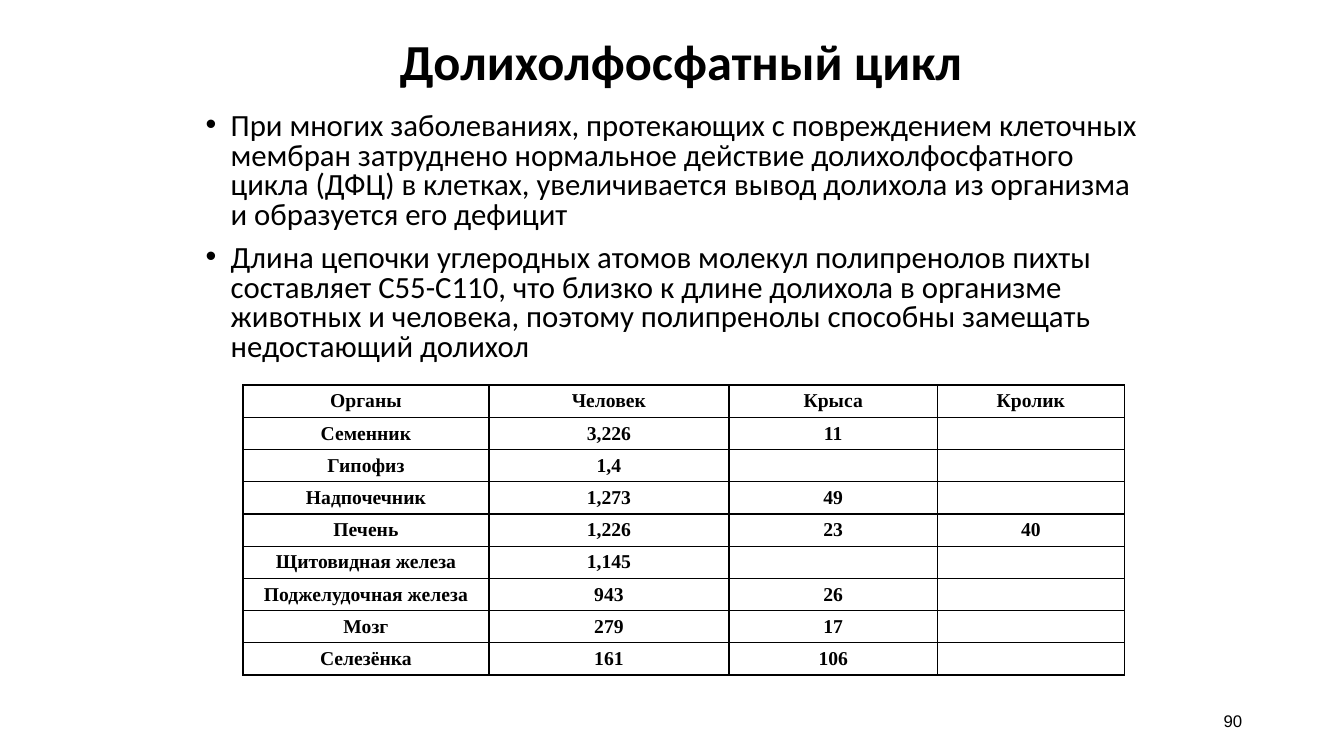
from lxml.etree import SubElement
from pptx import Presentation
from pptx.dml.color import RGBColor
from pptx.enum.text import MSO_ANCHOR, PP_ALIGN
from pptx.oxml.ns import qn
from pptx.util import Pt

SCALE = 9144  # EMU per px, 100 px to the inch
COLORS = {"ink": "000000", "paper": "FFFFFF"}
TITLE = "Долихолфосфатный цикл"
POINTS = [
    "При многих заболеваниях, протекающих с повреждением клеточных мембран "
    "затруднено нормальное действие долихолфосфатного цикла (ДФЦ) в клетках, "
    "увеличивается вывод долихола из организма и образуется его дефицит",
    "Длина цепочки углеродных атомов молекул полипренолов пихты составляет "
    "C55-C110, что близко к длине долихола в организме животных и человека, "
    "поэтому полипренолы способны замещать недостающий долихол",
]
ORGANS = [
    ("Органы", "Человек", "Крыса", "Кролик"),
    ("Семенник", "3,226", "11", ""),
    ("Гипофиз", "1,4", "", ""),
    ("Надпочечник", "1,273", "49", ""),
    ("Печень", "1,226", "23", "40"),
    ("Щитовидная железа", "1,145", "", ""),
    ("Поджелудочная железа", "943", "26", ""),
    ("Мозг", "279", "17", ""),
    ("Селезёнка", "161", "106", ""),
]


def px(*sizes):
    return [size * SCALE for size in sizes]


def color(name):
    return RGBColor.from_string(COLORS[name])


def write(para, text, font="Calibri", size=22, bold=False, align=PP_ALIGN.LEFT,
          lines=1.0, before=0, bullet=""):
    para.alignment, para.line_spacing = align, lines
    para.space_before = Pt(before)
    if bullet:
        props = para._p.get_or_add_pPr()
        indent, = px(25)
        props.set("marL", str(indent))
        props.set("indent", str(-indent))
        SubElement(props, qn("a:buFont"), typeface="Arial")
        SubElement(props, qn("a:buChar"), char=bullet)
    run = para.add_run()
    run.text = text
    run.font.name, run.font.size, run.font.bold = font, Pt(size), bold
    run.font.color.rgb = color("ink")


def border(cell):
    props = cell._tc.get_or_add_tcPr()
    for place, side in enumerate(("lnL", "lnR", "lnT", "lnB")):
        line = SubElement(props, qn(f"a:{side}"), w=str(Pt(1)))
        fill = SubElement(line, qn("a:solidFill"))
        SubElement(fill, qn("a:srgbClr"), val=COLORS["ink"])
        props.insert(place, line)


class Deck:
    def __init__(self, width, height):
        self.show = Presentation()
        self.show.slide_width, self.show.slide_height = px(width, height)
        self.slide = self.show.slides.add_slide(self.show.slide_layouts[6])
        fill = self.slide.background.fill
        fill.solid()
        fill.fore_color.rgb = color("paper")

    def text(self, box, texts, anchor=MSO_ANCHOR.TOP, before=0, **style):
        frame = self.slide.shapes.add_textbox(*px(*box)).text_frame
        frame.word_wrap, frame.vertical_anchor = True, anchor
        for num, text in enumerate(texts):
            para = frame.add_paragraph() if num else frame.paragraphs[0]
            write(para, text, before=before if num else 0, **style)

    def table(self, left, top, widths, height, rows, **style):
        size = px(left, top, sum(widths), height * len(rows))
        table = self.slide.shapes.add_table(len(rows), len(widths), *size).table
        for col, width in zip(table.columns, px(*widths)):
            col.width = width
        for line, row in zip(table.rows, rows):
            line.height, = px(height)
            for cell, text in zip(line.cells, row):
                cell.margin_top = cell.margin_bottom = 0
                cell.vertical_anchor = MSO_ANCHOR.MIDDLE
                cell.fill.background()
                border(cell)
                if text:
                    write(cell.text_frame.paragraphs[0], text, **style)


def main():
    deck = Deck(1333, 750)
    deck.text((217, 27, 917, 73), [TITLE], MSO_ANCHOR.MIDDLE, size=36, bold=True,
              align=PP_ALIGN.CENTER, lines=0.9)
    deck.text((194, 107, 953, 291), POINTS, before=10, lines=0.8, bullet="•")
    deck.table(241, 382, (244, 238, 207, 185), 32, ORGANS, font="Times New Roman",
               size=14, bold=True, align=PP_ALIGN.CENTER)
    deck.text((942, 695, 300, 40), ["90"], MSO_ANCHOR.MIDDLE, font="Arial", size=12,
              align=PP_ALIGN.RIGHT)
    deck.show.save("out.pptx")


if __name__ == "__main__":
    main()
